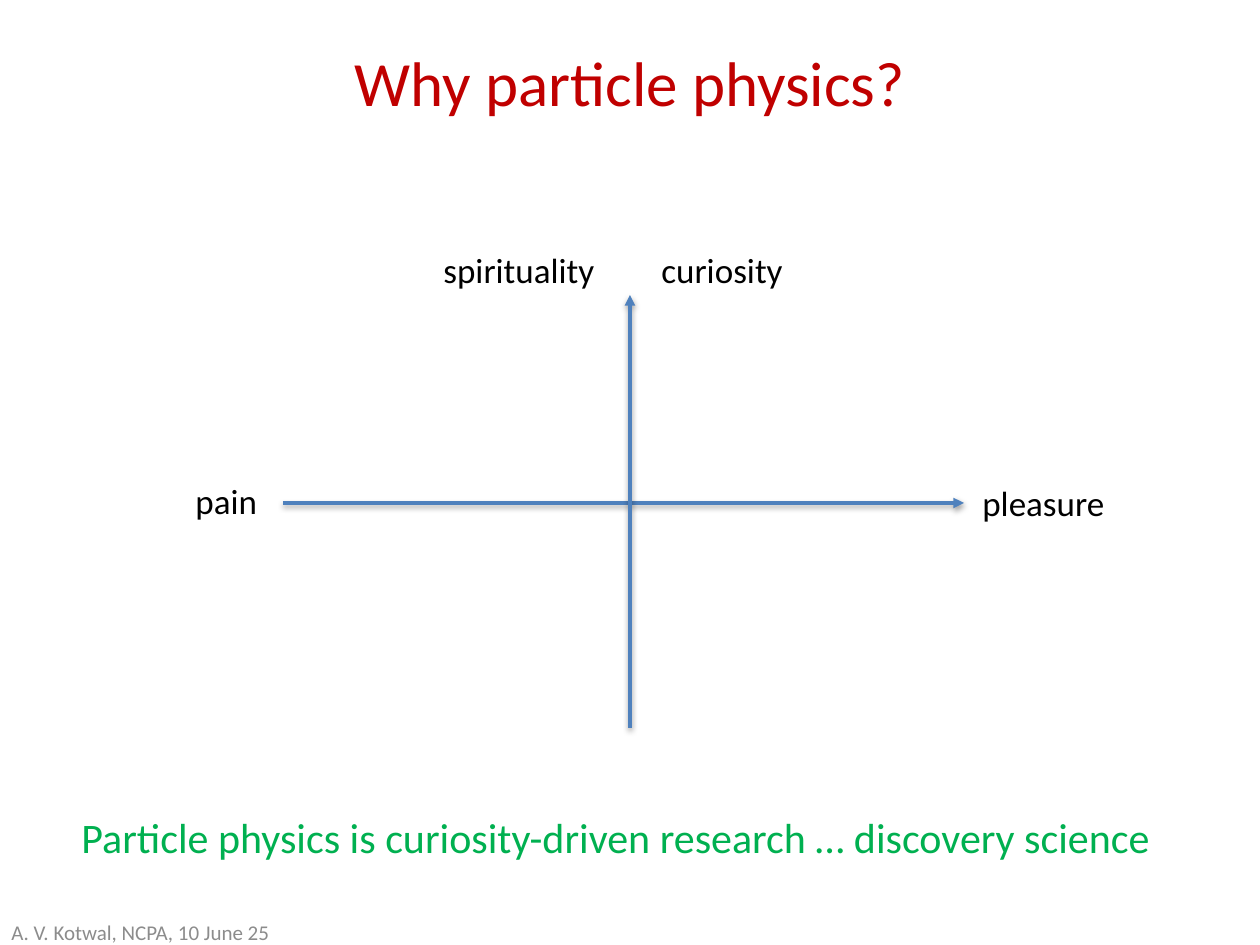
import pptx
import pptx.util
import pptx.dml.color
import pptx.enum.shapes
import pptx.enum.text
import pptx.oxml
import pptx.oxml.ns

PX = 914400 // 126  # EMU per pixel
COLORS = {
    "title": "C00000",
    "label": "000000",
    "axis": "4F81BD",
    "message": "00B050",
    "footer": "8C8C8C",
    "shadow": "000000",
}
ALIGN = pptx.enum.text.PP_ALIGN
ANCHOR = pptx.enum.text.MSO_ANCHOR
AUTO_SIZE = pptx.enum.text.MSO_AUTO_SIZE


def px(length):
    return pptx.util.Emu(length * PX)


def rgb(name):
    return pptx.dml.color.RGBColor.from_string(COLORS[name])


def add_text(slide, text, box, size=20, color="label", align=ALIGN.LEFT,
             anchor=ANCHOR.TOP, wrap=True, grow=True):
    frame = slide.shapes.add_textbox(*map(px, box)).text_frame
    frame.word_wrap = wrap
    frame.auto_size = AUTO_SIZE.SHAPE_TO_FIT_TEXT if grow else AUTO_SIZE.NONE
    frame.vertical_anchor = anchor
    paragraph = frame.paragraphs[0]
    paragraph.alignment = align
    run = paragraph.add_run()
    run.text = text
    run.font.name = "Calibri"
    run.font.size = pptx.util.Pt(size)
    run.font.color.rgb = rgb(color)


def add_axis(slide, start, end):
    axis = slide.shapes.add_connector(
        pptx.enum.shapes.MSO_CONNECTOR.STRAIGHT, *map(px, start + end))
    axis.line.color.rgb = rgb("axis")
    axis.line.width = pptx.util.Pt(2)
    namespace = pptx.oxml.ns.nsdecls("a")
    # Arrowhead at the end, then a soft shadow below
    axis.line._get_or_add_ln().append(pptx.oxml.parse_xml(
        f'<a:tailEnd {namespace} type="triangle"/>'))
    axis._element.spPr.append(pptx.oxml.parse_xml(
        f'<a:effectLst {namespace}>'
        '<a:outerShdw blurRad="40000" dist="20000" dir="5400000" rotWithShape="0">'
        f'<a:srgbClr val="{COLORS["shadow"]}"><a:alpha val="38000"/></a:srgbClr>'
        '</a:outerShdw></a:effectLst>'))


def main():
    deck = pptx.Presentation()
    deck.slide_width, deck.slide_height = px(1260), px(945)
    slide = deck.slides.add_slide(deck.slide_layouts[6])

    # Title and footer
    centered = {"align": ALIGN.CENTER, "anchor": ANCHOR.MIDDLE, "grow": False}
    add_text(slide, "Why particle physics?", (0, 3, 1260, 157),
             size=36, color="title", **centered)
    add_text(slide, "A. V. Kotwal, NCPA, 10 June 25", (-59, 907, 399, 50),
             size=12, color="footer", **centered)

    # Horizontal axis: pain to pleasure
    add_axis(slide, (283, 503), (964, 503))
    add_text(slide, "pain", (183, 473, 94, 55))
    add_text(slide, "pleasure", (970, 475, 149, 55), wrap=False)

    # Vertical axis: up to spirituality and curiosity
    add_axis(slide, (630, 728), (630, 295))
    add_text(slide, "curiosity", (649, 242, 151, 55))
    add_text(slide, "spirituality", (431, 242, 186, 55))

    # Closing message
    add_text(slide,
             "Particle physics is curiosity-driven research … discovery science",
             (69, 805, 1105, 63), size=24, color="message", wrap=False)

    deck.save("out.pptx")


if __name__ == "__main__":
    main()
